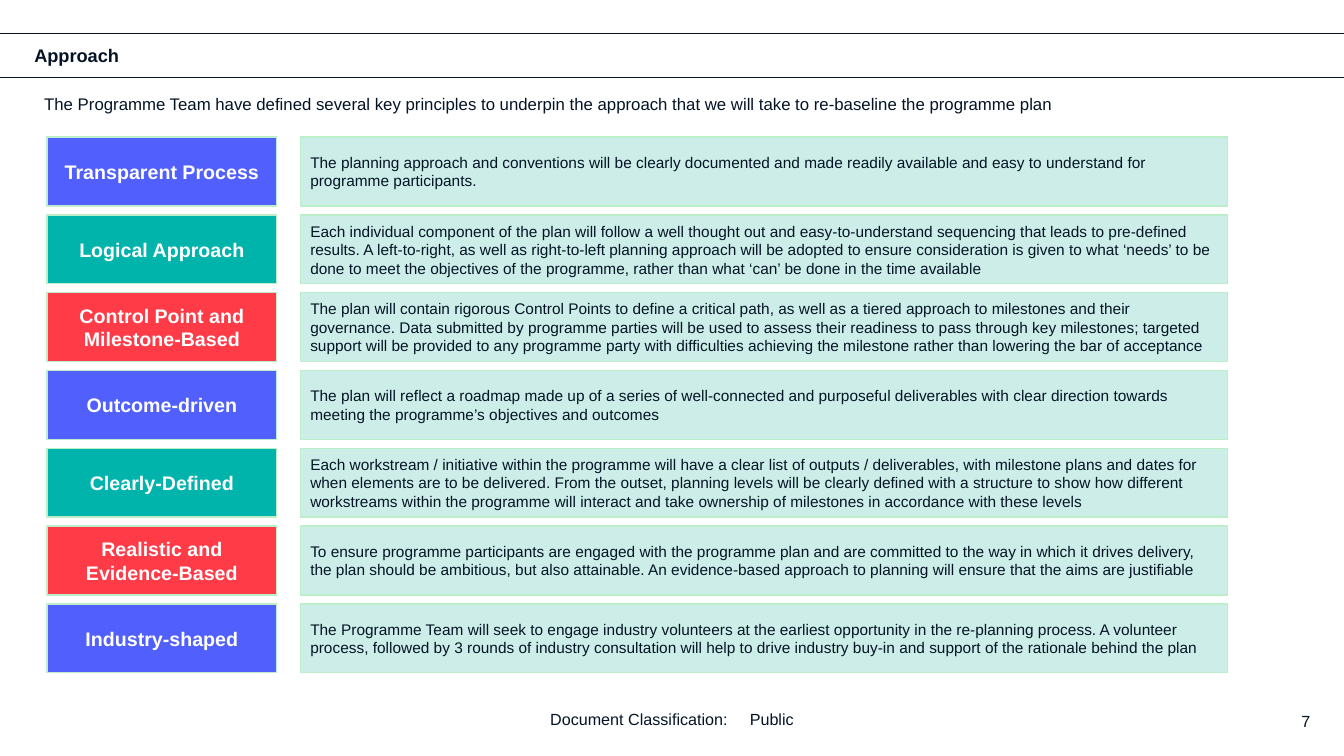
from itertools import cycle

from lxml import etree
from pptx import Presentation
from pptx import util as u
from pptx.dml.color import RGBColor
from pptx.enum import shapes, text
from pptx.oxml.ns import qn

PRINCIPLES = [
    ("Transparent Process",
     "The planning approach and conventions will be clearly documented and made readily available "
     "and easy to understand for programme participants."),
    ("Logical Approach",
     "Each individual component of the plan will follow a well thought out and easy-to-understand "
     "sequencing that leads to pre-defined results. A left-to-right, as well as right-to-left planning "
     "approach will be adopted to ensure consideration is given to what ‘needs’ to be done to meet the "
     "objectives of the programme, rather than what ‘can’ be done in the time available"),
    ("Control Point and Milestone-Based",
     "The plan will contain rigorous Control Points to define a critical path, as well as a tiered "
     "approach to milestones and their governance. Data submitted by programme parties will be used to "
     "assess their readiness to pass through key milestones; targeted support will be provided to any "
     "programme party with difficulties achieving the milestone rather than lowering the bar of acceptance"),
    ("Outcome-driven",
     "The plan will reflect a roadmap made up of a series of well-connected and purposeful deliverables "
     "with clear direction towards meeting the programme’s objectives and outcomes"),
    ("Clearly-Defined",
     "Each workstream / initiative within the programme will have a clear list of outputs / deliverables, "
     "with milestone plans and dates for when elements are to be delivered. From the outset, planning "
     "levels will be clearly defined with a structure to show how different workstreams within the "
     "programme will interact and take ownership of milestones in accordance with these levels"),
    ("Realistic and\nEvidence-Based",
     "To ensure programme participants are engaged with the programme plan and are committed to the way "
     "in which it drives delivery, the plan should be ambitious, but also attainable. An evidence-based "
     "approach to planning will ensure that the aims are justifiable"),
    ("Industry-shaped",
     "The Programme Team will seek to engage industry volunteers at the earliest opportunity in the "
     "re-planning process. A volunteer process, followed by 3 rounds of industry consultation will help "
     "to drive industry buy-in and support of the rationale behind the plan"),
]


def colour(value):
    """Turn a hex string into a colour."""
    return RGBColor.from_string(value)


class ApproachSlide:
    """Hold the style and the slide; lengths are percentages of the slide's size."""

    FONT, INK, WHITE = "Arial", "041425", "FFFFFF"
    PANEL, BORDER = "CDEEE8", "BCEEC9"
    LABELS = ("5160FC", "00B4AC", "FF3B48")
    LEFT, CENTRE, RIGHT = text.PP_ALIGN.LEFT, text.PP_ALIGN.CENTER, text.PP_ALIGN.RIGHT

    def __init__(self, presentation):
        self.width = presentation.slide_width
        self.height = presentation.slide_height
        self.slide = presentation.slides.add_slide(presentation.slide_layouts[6])

    def place(self, left, top, width, height):
        return (int(self.width * left / 100), int(self.height * top / 100),
                int(self.width * width / 100), int(self.height * height / 100))

    def set_words(self, shape, words, size, ink=INK, bold=False, align=LEFT, anchor=text.MSO_ANCHOR.MIDDLE):
        frame = shape.text_frame
        frame.text = words
        frame.word_wrap = True
        frame.vertical_anchor = anchor
        for paragraph in frame.paragraphs:
            paragraph.alignment = align
            for run in paragraph.runs:
                run.font.name = self.FONT
                run.font.size = u.Pt(size)
                run.font.bold = bold
                run.font.color.rgb = colour(ink)

    def rule(self, top):
        left, y, width, _ = self.place(0, top, 100, 0)
        line = self.slide.shapes.add_connector(shapes.MSO_CONNECTOR.STRAIGHT, left, y, left + width, y)
        line.line.color.rgb = colour(self.INK)
        line.line.width = u.Pt(0.5)
        etree.SubElement(line.element.spPr, qn("a:effectLst"))

    def box(self, area, fill, words, size, **style):
        shape = self.slide.shapes.add_shape(shapes.MSO_SHAPE.RECTANGLE, *self.place(*area))
        shape.shadow.inherit = False
        shape.fill.solid()
        shape.fill.fore_color.rgb = colour(fill)
        shape.line.color.rgb = colour(self.BORDER)
        shape.line.width = u.Pt(1)
        self.set_words(shape, words, size, **style)

    def note(self, area, words, size, inset=True, **style):
        shape = self.slide.shapes.add_textbox(*self.place(*area))
        self.set_words(shape, words, size, **style)
        frame = shape.text_frame
        if not inset:
            frame.margin_left = frame.margin_right = frame.margin_top = frame.margin_bottom = 0
        return frame.paragraphs[0]

    def tab_stop(self, paragraph, inches):
        properties = paragraph._p.get_or_add_pPr()
        stops = etree.SubElement(properties, qn("a:tabLst"))
        etree.SubElement(stops, qn("a:tab"), pos=str(u.Inches(inches)), algn="l")

    def principle(self, row, fill, label, description):
        top, height = 18.15 + 10.29 * row, 9.1
        self.box((3.5, top, 17.1, height), fill, label, 14, ink=self.WHITE, bold=True, align=self.CENTRE)
        self.box((22.35, top, 69, height), self.PANEL, description, 11)


def main():
    presentation = Presentation()
    presentation.slide_width = u.Inches(13.33)
    presentation.slide_height = u.Inches(7.5)
    approach = ApproachSlide(presentation)

    for top in (4.45, 10.25):
        approach.rule(top)
    title = approach.note((2.55, 5.45, 58.5, 4.15), "Approach", 13, inset=False, bold=True)
    title.line_spacing = 0.9
    approach.note((2.55, 11.75, 97.45, 4),
                  "The Programme Team have defined several key principles to underpin the approach "
                  "that we will take to re-baseline the programme plan",
                  12, anchor=text.MSO_ANCHOR.TOP)

    for row, (fill, principle) in enumerate(zip(cycle(approach.LABELS), PRINCIPLES)):
        approach.principle(row, fill, *principle)

    footer = approach.note((40.2, 92.4, 20, 5.35), "Document Classification:\tPublic", 11.5)
    approach.tab_stop(footer, 1.98)
    approach.note((70.65, 92.65, 26.85, 5.35), "7", 11.5, inset=False, align=approach.RIGHT)

    presentation.save("out.pptx")


if __name__ == "__main__":
    main()
